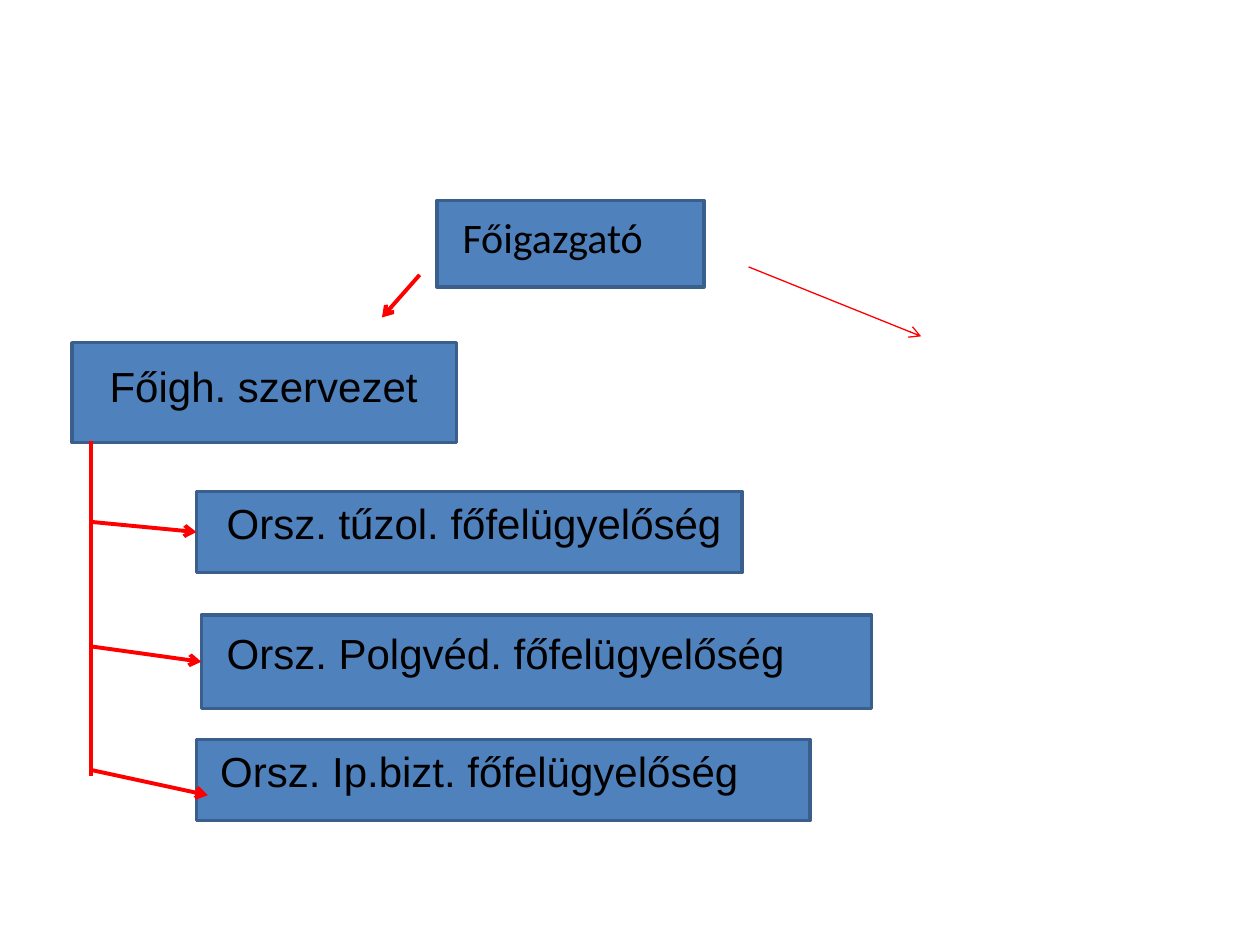
from pptx import Presentation
from pptx.dml.color import RGBColor
from pptx.enum.shapes import MSO_CONNECTOR, MSO_SHAPE
from pptx.enum.text import MSO_ANCHOR, MSO_AUTO_SIZE
from pptx.oxml.ns import qn
from pptx.util import Cm, Pt
from lxml.etree import SubElement

HUES = {"box": "4F81BD", "edge": "3A5F8C", "text": "000000", "arrow": "FF0000"}
TRUNK = 1.83  # x of the vertical line, in cm
LEFT = 1  # connection site in the middle of the left side


def hue(name):
    return RGBColor.from_string(HUES[name])


def add_box(slide, *area):
    box = slide.shapes.add_shape(MSO_SHAPE.RECTANGLE, *map(Cm, area))
    box.shadow.inherit = False
    box.fill.solid()
    box.fill.fore_color.rgb = hue("box")
    box.line.color.rgb = hue("edge")
    box.line.width = Pt(2)
    return box


def style(par, face):
    par.font.name = face
    par.font.size = Pt(24)
    par.font.color.rgb = hue("text")


def add_label(slide, text, *area, wrap=False):
    frame = slide.shapes.add_textbox(*map(Cm, area)).text_frame
    frame.word_wrap = wrap
    frame.auto_size = MSO_AUTO_SIZE.SHAPE_TO_FIT_TEXT
    frame.text = text
    style(frame.paragraphs[0], "Arial")


def fill_body(slide, text, *area):
    """Move the body placeholder in front of the boxes and write its one line."""
    body = slide.placeholders[1]
    body.element.getparent().append(body.element)
    body.left, body.top, body.width, body.height = map(Cm, area)
    frame = body.text_frame
    frame.auto_size = MSO_AUTO_SIZE.NONE
    frame.vertical_anchor = MSO_ANCHOR.TOP
    frame.text = text
    par = frame.paragraphs[0]
    style(par, "Calibri")
    props = par._p.get_or_add_pPr()
    props.set("marL", str(Cm(0.95)))
    props.set("indent", str(Cm(-0.95)))
    SubElement(props, qn("a:buNone"))
    par.space_before = Pt(4.8)


def add_line(slide, *ends, width=2.25, head=True, goal=None):
    """Draw a line, with an arrowhead at its end, joined to the goal if given."""
    line = slide.shapes.add_connector(MSO_CONNECTOR.STRAIGHT, *map(Cm, ends))
    line.line.color.rgb = hue("arrow")
    line.line.width = Pt(width)
    if head:
        SubElement(line.line._get_or_add_ln(), qn("a:tailEnd"), type="arrow")
    SubElement(line.element.spPr, qn("a:effectLst"))
    if goal is not None:
        line.end_connect(goal, LEFT)


def main():
    deck = Presentation()
    deck.slide_width, deck.slide_height = Cm(25.4), Cm(19.05)
    slide = deck.slides.add_slide(deck.slide_layouts[1])
    title = slide.shapes.title.element
    title.getparent().remove(title)

    add_box(slide, 3.96, 14.91, 12.37, 1.63)
    civil = add_box(slide, 4.06, 12.4, 13.51, 1.88)
    fire = add_box(slide, 3.96, 9.91, 11, 1.63)
    add_box(slide, 1.45, 6.91, 7.75, 2.01)
    add_box(slide, 8.81, 4.04, 5.38, 1.75)

    fill_body(slide, "Főigazgató", 9.07, 4.14, 6.25, 1.37)
    add_label(slide, "Főigh. szervezet", 1.96, 7.14, 6.78, 1.3)
    add_label(slide, "Orsz. tűzol. főfelügyelőség", 4.32, 9.91, 10.74, 1.3, wrap=True)
    add_label(slide, "Orsz. Polgvéd. főfelügyelőség", 4.32, 12.52, 11.79, 1.3)
    add_label(slide, "Orsz. Ip.bizt. főfelügyelőség", 4.19, 14.91, 11.07, 1.3)

    add_line(slide, 8.46, 5.54, 7.7, 6.4)
    add_line(slide, TRUNK, 8.89, TRUNK, 15.65, head=False)
    add_line(slide, TRUNK, 10.52, 3.96, 10.72, goal=fire)
    add_line(slide, TRUNK, 13.03, 4.06, 13.34, goal=civil)
    add_line(slide, TRUNK, 15.52, 4.19, 16.03)
    add_line(slide, 15.09, 5.38, 18.57, 6.78, width=0.75)
    deck.save("out.pptx")


if __name__ == "__main__":
    main()
